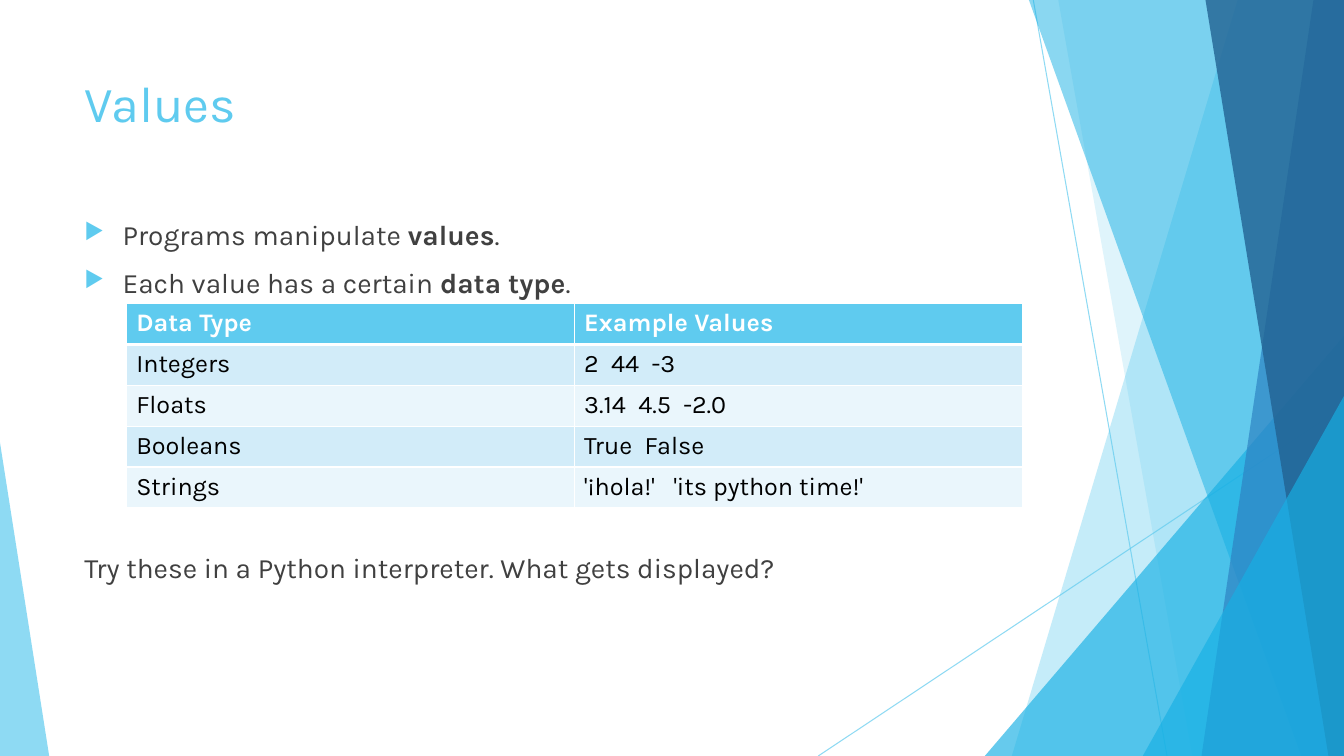
from lxml import etree
from pptx import Presentation
from pptx.dml.color import RGBColor
from pptx.enum.shapes import MSO_CONNECTOR, MSO_SHAPE
from pptx.enum.text import MSO_ANCHOR, MSO_AUTO_SIZE, PP_ALIGN
from pptx.oxml.ns import qn
from pptx.util import Cm, Pt

STRAIGHT = MSO_CONNECTOR.STRAIGHT
TRIANGLE = MSO_SHAPE.ISOSCELES_TRIANGLE
TOP = MSO_ANCHOR.TOP
LEFT = PP_ALIGN.LEFT
NO_AUTOFIT = MSO_AUTO_SIZE.NONE
TITLE_ONLY = 5

WIDTH, HEIGHT = 33.87, 19.05
FONT = "Karla"
COLOURS = {
    "sky": "5FCBEF", "cyan": "17B0E4", "blue": "2E83C3", "navy": "226292",
    "body": "404040", "black": "000000", "white": "FFFFFF",
    "row_dark": "D2ECF9", "row_light": "EAF6FC",
}


def add_element(parent, tag, **attributes):
    return etree.SubElement(parent, qn(tag), attributes)


class SlideBuilder:
    def __init__(self, slide):
        self.slide = slide
        self.shapes = slide.shapes

    def paint(self, fill, colour, alpha=100):
        fill.solid()
        fill.fore_color.rgb = RGBColor.from_string(COLOURS[colour])
        if alpha < 100:
            self.set_alpha(fill, alpha)

    def set_alpha(self, fill, alpha):
        colour_element = fill._xPr.find(".//" + qn("a:srgbClr"))
        add_element(colour_element, "a:alpha", val=str(alpha * 1000))

    def line(self, x1, y1, x2, y2):
        connector = self.shapes.add_connector(STRAIGHT, Cm(x1), Cm(y1), Cm(x2), Cm(y2))
        connector.line.width = Pt(0.75)
        self.paint(connector.line.fill, "sky", 70)
        add_element(connector._element.spPr, "a:effectLst")

    def finish(self, shape, colour, alpha):
        shape.shadow.inherit = False
        shape.line.fill.background()
        self.paint(shape.fill, colour, alpha)

    def band(self, top_x, bottom_x, colour, alpha):
        """Area from a slanted left edge to the right edge of the slide."""
        corners = [(WIDTH, 0), (WIDTH, HEIGHT), (bottom_x, HEIGHT)]
        builder = self.shapes.build_freeform(Cm(top_x), 0)
        builder.add_line_segments([(Cm(x), Cm(y)) for x, y in corners], close=True)
        self.finish(builder.convert_to_shape(), colour, alpha)

    def triangle(self, left, top, width, apex, colour, alpha):
        """Triangle that stands on the bottom edge of the slide."""
        shape = self.shapes.add_shape(TRIANGLE, Cm(left), Cm(top), Cm(width), Cm(HEIGHT - top))
        shape.adjustments[0] = apex
        self.finish(shape, colour, alpha)

    def run(self, paragraph, text, size, colour, bold=False, spacing=0):
        run = paragraph.add_run()
        run.text = text
        run.font.name = FONT
        run.font.size = Pt(size)
        run.font.bold = bold
        run.font.color.rgb = RGBColor.from_string(COLOURS[colour])
        if spacing:
            run._r.get_or_add_rPr().set("spc", str(round(spacing * 100)))

    def frame(self, shape):
        frame = shape.text_frame
        frame.word_wrap = True
        frame.auto_size = NO_AUTOFIT
        frame.vertical_anchor = TOP
        return frame

    def title(self, text, left, top, width, height):
        shape = self.shapes.title
        shape.left, shape.top = Cm(left), Cm(top)
        shape.width, shape.height = Cm(width), Cm(height)
        paragraph = self.frame(shape).paragraphs[0]
        paragraph.alignment = LEFT
        self.run(paragraph, text, 36, "sky")

    def bullet(self, paragraph):
        properties = paragraph._p.get_or_add_pPr()
        properties.set("marL", str(Cm(0.96)))
        properties.set("indent", str(-Cm(0.96)))
        colour = add_element(properties, "a:buClr")
        add_element(colour, "a:srgbClr", val=COLOURS["sky"])
        add_element(properties, "a:buSzPct", val="80000")
        add_element(properties, "a:buChar", char="▶")

    def body(self, paragraphs, left, top, width, height):
        box = self.shapes.add_textbox(Cm(left), Cm(top), Cm(width), Cm(height))
        frame = self.frame(box)
        for index, (has_bullet, space_before, runs) in enumerate(paragraphs):
            paragraph = frame.add_paragraph() if index else frame.paragraphs[0]
            if has_bullet:
                self.bullet(paragraph)
            paragraph.space_before = Pt(space_before)
            for text, bold in runs:
                self.run(paragraph, text, 20, "body", bold)

    def cell(self, cell, parts, gap, row):
        # Borders come before the fill in the cell properties
        properties = cell._tc.get_or_add_tcPr()
        thick_side = {0: "B", 1: "T"}.get(row)
        for side in "LRTB":
            width = Pt(3 if side == thick_side else 1)
            border = add_element(properties, f"a:ln{side}", w=str(width))
            fill = add_element(border, "a:solidFill")
            add_element(fill, "a:srgbClr", val=COLOURS["white"])
        header = row == 0
        self.paint(cell.fill, "sky" if header else "row_dark" if row % 2 else "row_light")
        colour = "white" if header else "black"
        paragraph = cell.text_frame.paragraphs[0]
        for index, part in enumerate(parts):
            if index:
                self.run(paragraph, " ", 18, colour, spacing=gap)
            self.run(paragraph, part, 18, colour, header)

    def table(self, rows, left, top, width, row_height):
        frame = self.shapes.add_table(
            len(rows), 2, Cm(left), Cm(top), Cm(width), Cm(row_height * len(rows)))
        for row, (label, values, gap) in enumerate(rows):
            self.cell(frame.table.cell(row, 0), [label], 0, row)
            self.cell(frame.table.cell(row, 1), values, gap, row)


def main():
    presentation = Presentation()
    presentation.slide_width, presentation.slide_height = Cm(WIDTH), Cm(HEIGHT)
    layout = presentation.slide_layouts[TITLE_ONLY]
    builder = SlideBuilder(presentation.slides.add_slide(layout))

    # Decoration along the slide edges
    builder.line(26.04, 0, 29.41, HEIGHT)
    builder.line(WIDTH, 10.24, 20.62, HEIGHT)
    builder.band(31.19, 25.5, "sky", 36)
    builder.band(26.67, 30.05, "sky", 20)
    builder.triangle(24.82, 8.46, 9.05, 1, "cyan", 66)
    builder.band(25.93, 32.79, "cyan", 50)
    builder.band(33.1, 30.28, "blue", 70)
    builder.band(30.38, 33.48, "navy", 80)
    builder.triangle(28.8, 9.98, 5.07, 1, "cyan", 66)
    builder.triangle(0, 11.15, 1.24, 0, "sky", 70)

    # Title and text; the last paragraph stands below the table
    builder.title("Values", 1.88, 1.7, 23.88, 3.66)
    builder.body([
        (True, 10, [("Programs manipulate ", False), ("values", True), (".", False)]),
        (True, 10, [("Each value has a certain ", False), ("data type", True), (".", False)]),
        (False, 180, [("Try these in a Python interpreter. What gets displayed?", False)]),
    ], 1.88, 5.36, 23.88, 11.43)

    # Data types: label, example values, extra gap between values in points
    builder.table([
        ("Data Type", ["Example Values"], 0),
        ("Integers", ["2", "44", "-3"], 4.5),
        ("Floats", ["3.14", "4.5", "-2.0"], 4.5),
        ("Booleans", ["True", "False"], 4.5),
        ("Strings", ["'¡hola!'", "'its python time!'"], 9),
    ], 3.18, 7.65, 22.58, 1.03)

    presentation.save("out.pptx")


if __name__ == "__main__":
    main()
